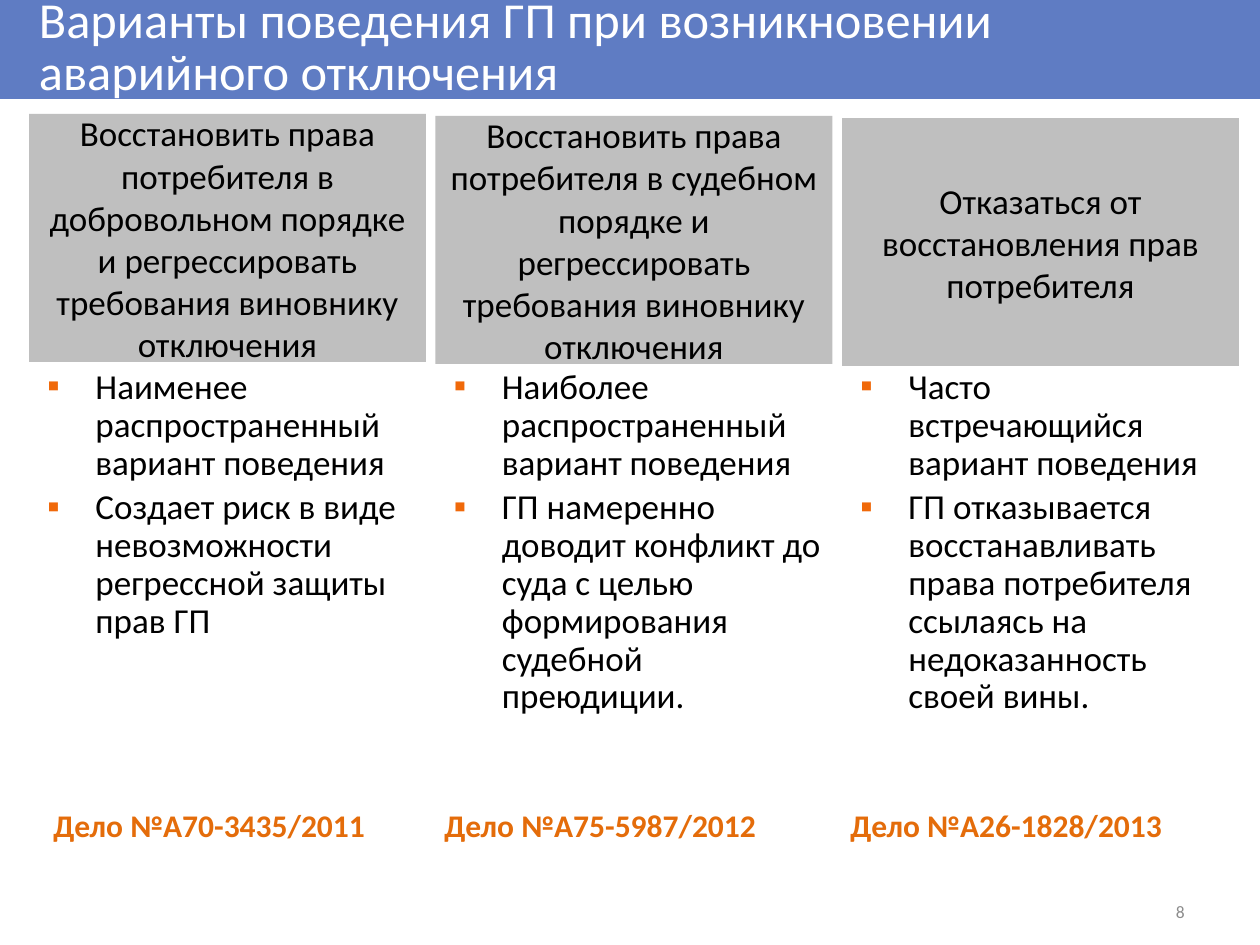
import pptx
import pptx.util
import pptx.dml.color
import pptx.enum.shapes
import pptx.enum.text
import pptx.oxml
import pptx.oxml.ns

RGB = pptx.dml.color.RGBColor
ALIGN = pptx.enum.text.PP_ALIGN
ANCHOR = pptx.enum.text.MSO_ANCHOR
FIT = pptx.enum.text.MSO_AUTO_SIZE

BLUE = RGB(0x5F, 0x7C, 0xC3)
SILVER = RGB(0xBF, 0xBF, 0xBF)
GRAY = RGB(0x8C, 0x8C, 0x8C)
BLACK = RGB(0, 0, 0)
WHITE = RGB(0xFF, 0xFF, 0xFF)
AMBER = RGB(0xE4, 0x6C, 0x0A)
MARK = RGB(0xF0, 0x69, 0x0A)

FONT = "Calibri"
SCALE = 914400 / 126
LEFT, STEP, WIDTH = 29, 406.5, 397

COLUMNS = [
    ("Восстановить права потребителя в добровольном порядке "
     "и регрессировать требования виновнику отключения",
     ["Наименее распространенный вариант поведения",
      "Создает риск в виде невозможности регрессной защиты прав ГП"],
     "Дело №А70-3435/2011", 41),
    ("Восстановить права потребителя в судебном порядке "
     "и регрессировать требования виновнику отключения",
     ["Наиболее распространенный вариант поведения",
      "ГП намеренно доводит конфликт до суда с целью "
      "формирования судебной преюдиции."],
     "Дело №А75-5987/2012", 432),
    ("Отказаться от восстановления прав потребителя",
     ["Часто встречающийся вариант поведения",
      "ГП отказывается восстанавливать права потребителя "
      "ссылаясь на недоказанность своей вины."],
     "Дело №А26-1828/2013", 838),
]


def px(size):
    return pptx.util.Emu(round(size * SCALE))


def style(frame, size, color, bold=False, align=ALIGN.LEFT):
    for para in frame.paragraphs:
        para.alignment = align
        for run in para.runs:
            font = run.font
            font.name, font.size = FONT, pptx.util.Pt(size)
            font.bold, font.color.rgb = bold, color


def add_rect(slide, x, y, w, h, fill):
    rect = slide.shapes.add_shape(
        pptx.enum.shapes.MSO_SHAPE.RECTANGLE, px(x), px(y), px(w), px(h))
    rect.shadow.inherit = False
    rect.fill.solid()
    rect.fill.fore_color.rgb = fill
    rect.line.fill.background()
    return rect


def add_title(slide, text):
    title = slide.shapes.title
    title.left, title.top, title.width, title.height = map(px, (34, -1, 1091, 100))
    frame = title.text_frame
    frame.text = text
    frame.word_wrap = True
    frame.auto_size = FIT.NONE
    frame.vertical_anchor = ANCHOR.MIDDLE
    frame.margin_left = frame.margin_right = px(5)
    frame.margin_top = frame.margin_bottom = px(5)
    frame.paragraphs[0].line_spacing = 0.85
    style(frame, 28.8, WHITE)
    band = add_rect(slide, 0, 0, 1260, 99, BLUE)
    title._element.addprevious(band._element)


def add_head(slide, x, y, text):
    frame = add_rect(slide, x, y, WIDTH, 248, SILVER).text_frame
    frame.text = text
    frame.word_wrap = True
    frame.vertical_anchor = ANCHOR.MIDDLE
    style(frame, 20, BLACK, align=ALIGN.CENTER)


def add_text(slide, x, y, w, h, text):
    frame = slide.shapes.add_textbox(px(x), px(y), px(w), px(h)).text_frame
    frame.word_wrap = True
    frame.text = text
    return frame


def add_mark(para):
    props = para._p.get_or_add_pPr()
    props.set("marL", str(px(48)))
    props.set("indent", str(px(-48)))
    space = pptx.oxml.ns.nsdecls("a")
    for part in (f'<a:buClr {space}><a:srgbClr val="{MARK}"/></a:buClr>',
                 f'<a:buFont {space} typeface="{FONT}"/>',
                 f'<a:buChar {space} char="▪"/>'):
        props.append(pptx.oxml.parse_xml(part))


def add_list(slide, x, w, h, items):
    frame = add_text(slide, x, 363, w, h, "\n".join(items))
    for rank, para in enumerate(frame.paragraphs):
        add_mark(para)
        para.line_spacing = 0.9
        if rank:
            para.space_before = pptx.util.Pt(4)
    style(frame, 20, BLACK)


def main():
    deck = pptx.Presentation()
    deck.slide_width, deck.slide_height = px(1260), px(945)
    slide = deck.slides.add_slide(deck.slide_layouts[5])
    add_title(slide, "Варианты поведения ГП при возникновении аварийного отключения")
    for rank, (head, items, case, left) in enumerate(COLUMNS):
        x = LEFT + rank * STEP
        add_head(slide, x, 114 + 2 * rank, head)
        add_list(slide, x + 6, WIDTH if rank else 387, 364 if rank else 289, items)
        style(add_text(slide, left, 800, 380, 50, case), 18, AMBER, bold=True)
    page = add_text(slide, 1142, 896, 55, 30, "8")
    page.vertical_anchor = ANCHOR.MIDDLE
    style(page, 10, GRAY, align=ALIGN.RIGHT)
    deck.save("out.pptx")


if __name__ == "__main__":
    main()
